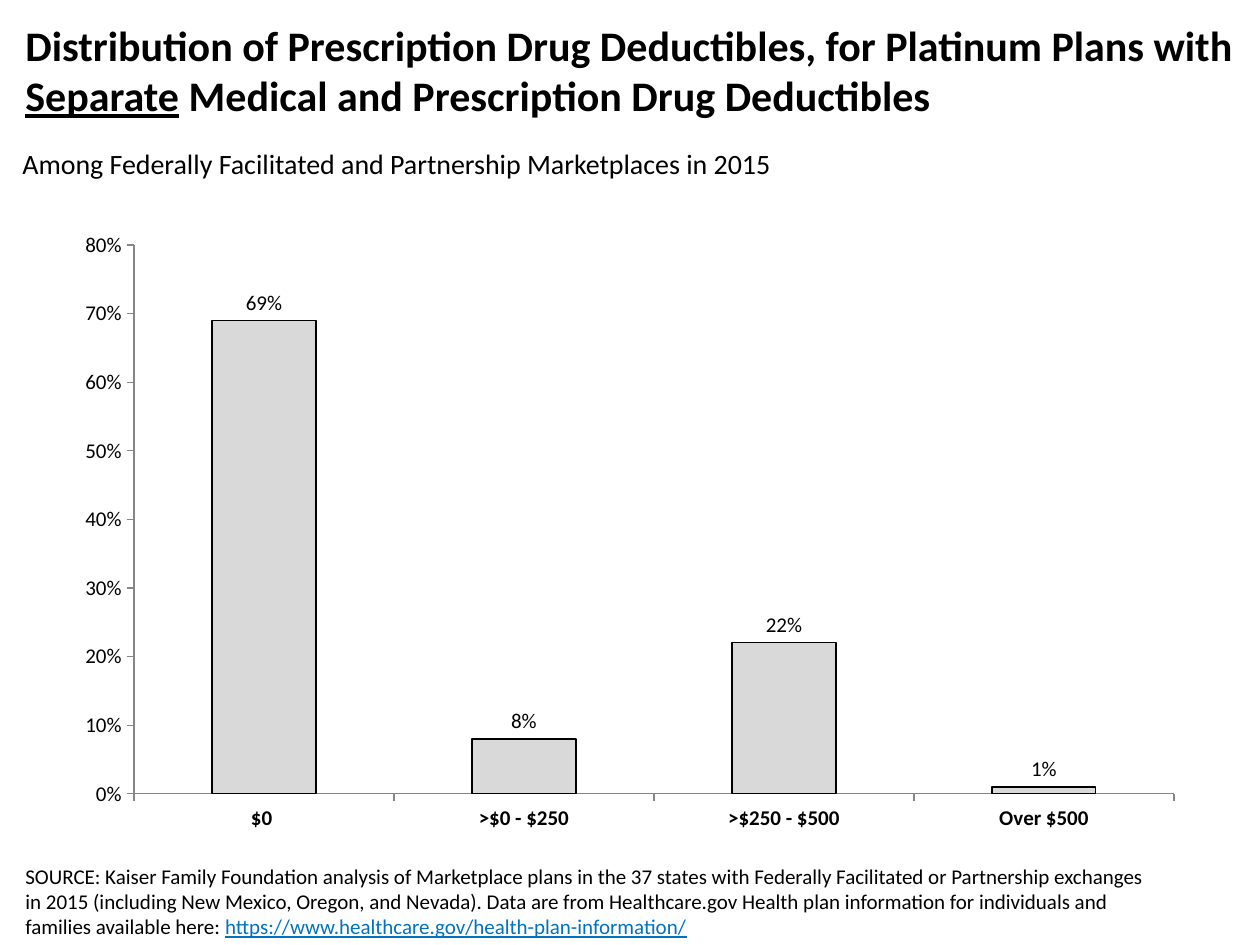
from lxml import etree
from pptx import Presentation
from pptx import util as u
from pptx.chart.data import CategoryChartData
from pptx.dml.color import RGBColor
from pptx.enum import chart as ch, text
from pptx.oxml.ns import qn

SCALE = 914400 / 126
COLORS = {"ink": "000000", "bar": "D9D9D9", "axis": "868686", "link": "0072C0"}
FONT = "Calibri"
DEDUCTIBLES = {"$0 ": 0.69, ">$0 - $250": 0.08, ">$250 - $500": 0.22, "Over $500": 0.01}


def px(*lengths):
    return [u.Emu(round(length * SCALE)) for length in lengths]


def color(name):
    return RGBColor.from_string(COLORS[name])


def set_all(target, **values):
    for key, value in values.items():
        setattr(target, key, value)


def style_font(font, size, ink="ink", **values):
    set_all(font, name=FONT, size=u.Pt(size), **values)
    font.color.rgb = color(ink)


def style_line(line, ink):
    line.color.rgb = color(ink)
    line.width = u.Pt(0.75)


def add_words(slide, box, size, runs, wrap=True, **common):
    frame = slide.shapes.add_textbox(*px(*box)).text_frame
    set_all(frame, word_wrap=wrap, vertical_anchor=text.MSO_ANCHOR.TOP)
    paragraph = frame.paragraphs[0]
    for words, values in runs:
        run = paragraph.add_run()
        run.text = words
        style_font(run.font, size, **common, **values)


def add_heading(slide, box):
    left, top, width, height = box
    add_words(slide, (left, top, width, 126), 24, [
        ("Distribution of Prescription Drug Deductibles, for Platinum Plans with ", {}),
        ("Separate", {"underline": True}),
        (" Medical and Prescription Drug Deductibles", {}),
    ], bold=True)
    add_words(slide, (left - 3, top + 127, 789, height - 127), 16, [
        ("Among Federally Facilitated and Partnership Marketplaces in 2015", {}),
    ], wrap=False)


def place_plot(chart, box, plot_box):
    left, top, width, height = box
    plot_left, plot_top, plot_width, plot_height = plot_box
    plot_area = chart._chartSpace.chart.plotArea
    for old in plot_area.findall(qn("c:layout")):
        plot_area.remove(old)
    layout = etree.Element(qn("c:layout"))
    manual = etree.SubElement(layout, qn("c:manualLayout"))
    settings = {
        "layoutTarget": "inner", "xMode": "edge", "yMode": "edge",
        "x": (plot_left - left) / width, "y": (plot_top - top) / height,
        "w": plot_width / width, "h": plot_height / height,
    }
    for tag, value in settings.items():
        shown = value if isinstance(value, str) else f"{value:.4f}"
        etree.SubElement(manual, qn(f"c:{tag}")).set("val", shown)
    plot_area.insert(0, layout)


def add_deductible_chart(slide, box):
    data = CategoryChartData(number_format="0%")
    data.categories = list(DEDUCTIBLES)
    data.add_series("Series 1", list(DEDUCTIBLES.values()))
    chart = slide.shapes.add_chart(
        ch.XL_CHART_TYPE.COLUMN_CLUSTERED, *px(*box), data).chart
    set_all(chart, has_legend=False, has_title=False)
    style_font(chart.font, 18)
    left, top, width, height = box
    place_plot(chart, box, (left + 71, top + 25, width - 94, height - 75))

    set_all(chart.value_axis, minimum_scale=0, maximum_scale=0.8, major_unit=0.1)
    set_all(chart.value_axis.tick_labels, number_format="0%", number_format_is_linked=False)
    for axis, bold in ((chart.category_axis, True), (chart.value_axis, False)):
        set_all(axis, has_major_gridlines=False,
                major_tick_mark=ch.XL_TICK_MARK.OUTSIDE,
                minor_tick_mark=ch.XL_TICK_MARK.NONE)
        style_font(axis.tick_labels.font, 12, bold=bold)
        style_line(axis.format.line, "axis")

    plot = chart.plots[0]
    set_all(plot, gap_width=150, vary_by_categories=False, has_data_labels=True)
    set_all(plot.data_labels, show_value=True, number_format="0%",
            number_format_is_linked=False,
            position=ch.XL_LABEL_POSITION.OUTSIDE_END)
    style_font(plot.data_labels.font, 12)
    bars = plot.series[0]
    bars.format.fill.solid()
    bars.format.fill.fore_color.rgb = color("bar")
    style_line(bars.format.line, "ink")


def add_source(slide, box):
    add_words(slide, box, 12, [
        ("SOURCE: Kaiser Family Foundation analysis of Marketplace plans in the 37 states "
         "with Federally Facilitated or Partnership exchanges in 2015 (including New Mexico, "
         "Oregon, and Nevada). Data are from Healthcare.gov Health plan information for "
         "individuals and families available here: ", {}),
        ("https://www.healthcare.gov/health-plan-information/",
         {"ink": "link", "underline": True}),
    ])


def main():
    deck = Presentation()
    deck.slide_width, deck.slide_height = px(1260, 945)
    slide = deck.slides.add_slide(deck.slide_layouts[6])
    add_heading(slide, (13, 13, 1235, 174))
    add_deductible_chart(slide, (63, 220, 1134, 624))
    add_source(slide, (13, 857, 1147, 76))
    deck.save("out.pptx")


if __name__ == "__main__":
    main()
